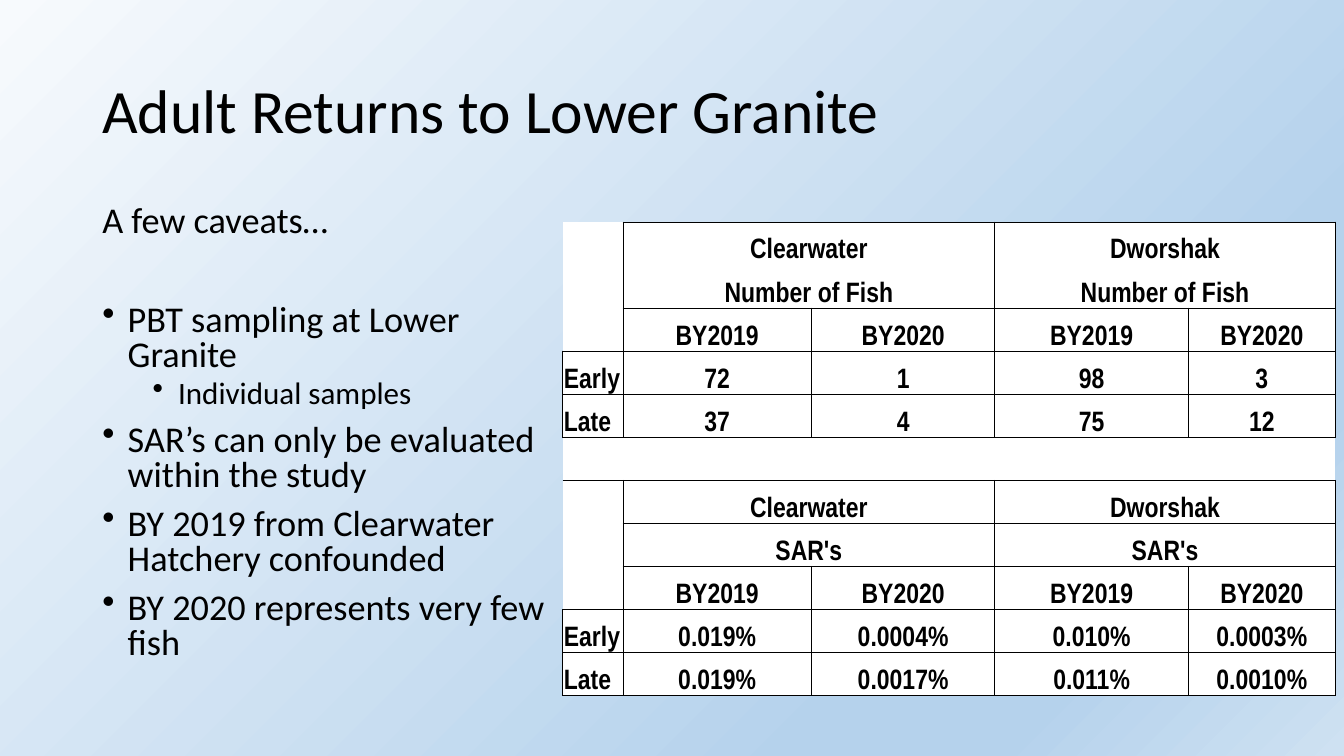
from lxml.etree import SubElement
from pptx import Presentation
from pptx.dml.color import RGBColor
from pptx.enum.text import MSO_ANCHOR, PP_ALIGN
from pptx.oxml.ns import qn
from pptx.util import Cm, Pt

BLACK = RGBColor(0x00, 0x00, 0x00)
WHITE = RGBColor(0xFF, 0xFF, 0xFF)
PALE = RGBColor(0xF7, 0xFA, 0xFD)
SKY = RGBColor(0xB5, 0xD2, 0xEC)
MIST = RGBColor(0xCE, 0xE1, 0xF2)
BACKGROUND_STOPS = [(0, PALE), (74, SKY), (83, SKY), (100, MIST)]

TITLE_FONT = {"name": "Calibri", "size": Pt(44)}
BODY_FONT = {"name": "Calibri", "size": Pt(25.9)}
SUB_FONT = {"name": "Calibri", "size": Pt(22.2)}
TABLE_FONT = {"name": "Arial Narrow", "size": Pt(20), "bold": True}
INTRO = {"line_spacing": 0.8, "space_before": Pt(10), "space_after": Pt(35.3)}
POINT = {"line_spacing": 0.8, "space_before": Pt(10)}
SUBPOINT = {"line_spacing": 0.8, "space_before": Pt(5), "level": 1}
CELL = {"margin_left": Cm(0.03), "margin_right": Cm(0.03), "margin_top": Cm(0.03),
        "margin_bottom": 0, "vertical_anchor": MSO_ANCHOR.BOTTOM}
NO_STYLE = "{2D5ABB26-0587-4C30-8999-92F81FD0307C}"

CAVEATS = [
    ("A few caveats…", INTRO, BODY_FONT, None),
    ("PBT sampling at Lower Granite", POINT, BODY_FONT, 0.64),
    ("Individual samples", SUBPOINT, SUB_FONT, 1.91),
    ("SAR’s can only be evaluated within the study", POINT, BODY_FONT, 0.64),
    ("BY 2019 from Clearwater Hatchery confounded", POINT, BODY_FONT, 0.64),
    ("BY 2020 represents very few fish", POINT, BODY_FONT, 0.64),
]
COL_WIDTHS = [1.52, 4.75, 4.62, 4.88, 3.7]
BLOCKS = [
    ("Number of Fish", ["72", "1", "98", "3"], ["37", "4", "75", "12"]),
    ("SAR's", ["0.019%", "0.0004%", "0.010%", "0.0003%"],
     ["0.019%", "0.0017%", "0.011%", "0.0010%"]),
]
BLOCK_BORDERS = [("R", "LRT", "LRT"), ("R", "LRB", "LRB"), ("RB", "LTB", "RTB"),
                 ("LRTB", "LTB", "RTB"), ("LRTB", "LTB", "RTB")]
GAP_BORDERS = ("T", "TB", "TB")


def apply(obj, values):
    """Set each named attribute on an object."""
    for name, value in values.items():
        setattr(obj, name, value)


def add_run(p, text, font):
    """Add black text in the given font to a paragraph."""
    r = p.add_run()
    r.text = text
    apply(r.font, font)
    r.font.color.rgb = BLACK


def add_bullet(p, indent):
    """Give a paragraph a hanging round bullet."""
    pPr = p._p.get_or_add_pPr()
    pPr.set("marL", str(Cm(indent)))
    pPr.set("indent", str(-Cm(0.64)))
    SubElement(pPr, qn("a:buChar"), char="•")


def add_background(s):
    """Fill the slide with a diagonal gradient."""
    fill = s.background.fill
    fill.gradient()
    fill.gradient_angle = 315
    stops = s.element.find(".//" + qn("a:gsLst"))
    for stop in list(stops):
        stops.remove(stop)
    for pos, color in BACKGROUND_STOPS:
        stop = SubElement(stops, qn("a:gs"), pos=str(pos * 1000))
        SubElement(stop, qn("a:srgbClr"), val=str(color))


def add_frame(s, box, anchor):
    """Add a wrapping text box and return its text frame."""
    tf = s.shapes.add_textbox(*map(Cm, box)).text_frame
    apply(tf, {"word_wrap": True, "vertical_anchor": anchor})
    return tf


def add_title(s, box):
    """Place the slide title."""
    p = add_frame(s, box, MSO_ANCHOR.MIDDLE).paragraphs[0]
    p.line_spacing = 0.9
    add_run(p, "Adult Returns to Lower Granite", TITLE_FONT)


def add_caveats(s, box):
    """Place the list of caveats."""
    tf = add_frame(s, box, MSO_ANCHOR.TOP)
    for i, (text, spacing, font, indent) in enumerate(CAVEATS):
        p = tf.add_paragraph() if i else tf.paragraphs[0]
        apply(p, spacing)
        if indent:
            add_bullet(p, indent)
        add_run(p, text, font)


def block_rows(measure, early, late):
    """Return the five text rows of one table block."""
    return [
        ["", "Clearwater", "", "Dworshak", ""],
        ["", measure, "", measure, ""],
        [""] + ["BY2019", "BY2020"] * 2,
        ["Early"] + early,
        ["Late"] + late,
    ]


def fill_cell(cell, text, sides, align):
    """Write, border and fill one table cell."""
    apply(cell, CELL)
    tcPr = cell._tc.get_or_add_tcPr()
    for side in sides:
        ln = SubElement(tcPr, qn("a:ln" + side), w=str(Pt(0.5)))
        SubElement(SubElement(ln, qn("a:solidFill")), qn("a:srgbClr"), val=str(BLACK))
    cell.fill.solid()
    cell.fill.fore_color.rgb = WHITE
    if text:
        p = cell.text_frame.paragraphs[0]
        p.alignment = align
        add_run(p, text, TABLE_FONT)


def add_returns_table(s, box):
    """Place the table of fish counts and return rates."""
    first, second = [block_rows(*block) for block in BLOCKS]
    rows = first + [[""] * 5] + second
    borders = BLOCK_BORDERS + [GAP_BORDERS] + BLOCK_BORDERS
    table = s.shapes.add_table(len(rows), len(COL_WIDTHS), *map(Cm, box)).table
    apply(table, {"first_row": False, "horz_banding": False})
    table._tbl.tblPr.find(qn("a:tableStyleId")).text = NO_STYLE
    for col, width in zip(table.columns, COL_WIDTHS):
        col.width = Cm(width)
    for i, (texts, (label, left, right)) in enumerate(zip(rows, borders)):
        table.rows[i].height = Cm(box[3] / len(rows))
        for j, (text, sides) in enumerate(zip(texts, [label] + [left, right] * 2)):
            align = PP_ALIGN.CENTER if j else PP_ALIGN.LEFT
            fill_cell(table.cell(i, j), text, sides, align)
    for i in (0, 1, 6, 7):
        for j in (1, 3):
            table.cell(i, j).merge(table.cell(i, j + 1))


def main():
    """Build and save the slide."""
    prs = Presentation()
    apply(prs, {"slide_width": Cm(33.87), "slide_height": Cm(19.05)})
    s = prs.slides.add_slide(prs.slide_layouts[6])
    add_background(s)
    add_title(s, (2.33, 1.01, 29.21, 3.68))
    add_caveats(s, (2.33, 5.07, 11.84, 12.09))
    add_returns_table(s, (14.18, 5.59, sum(COL_WIDTHS), 11.94))
    prs.save("out.pptx")


if __name__ == "__main__":
    main()
